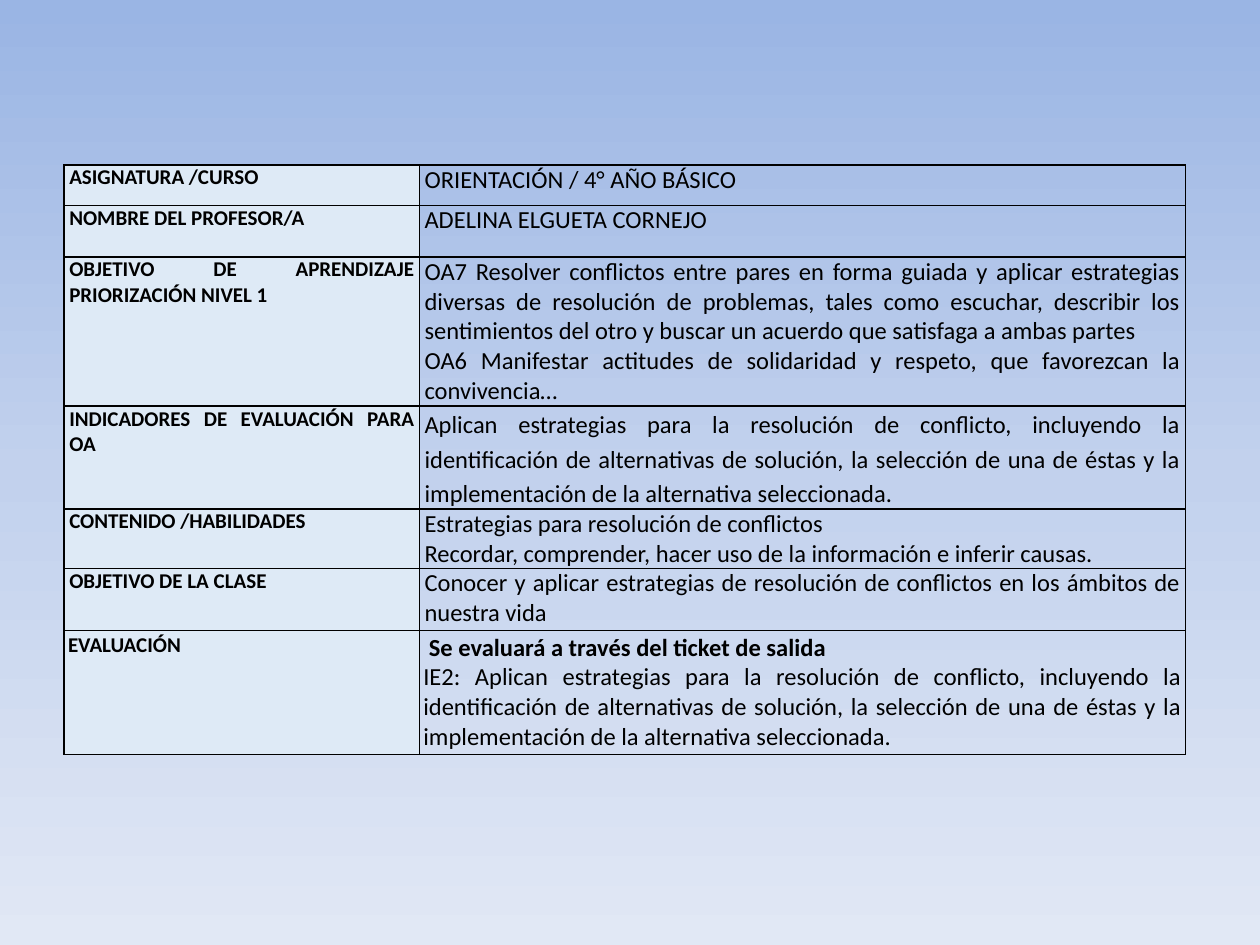
from copy import deepcopy

from lxml import etree
from pptx import Presentation
from pptx.dml.color import RGBColor
from pptx.enum.text import PP_ALIGN
from pptx.oxml.ns import qn
from pptx.util import Inches, Pt

JUSTIFY = PP_ALIGN.JUSTIFY
FONT = "Calibri"
BLACK = "000000"
LABEL_FILL = "DEEAF6"
BACKGROUND_STOPS = [(0, "9AB5E4"), (0.5, "C2D1ED"), (1, "E1E8F5")]
COLUMN_WIDTHS = [2.82, 6.08]
INDICATOR = (
    "Aplican estrategias para la resolución de conflicto, incluyendo la "
    "identificación de alternativas de solución, la selección de una de éstas "
    "y la implementación de la alternativa seleccionada."
)
ROWS = [
    (0.32, "ASIGNATURA /CURSO", ["ORIENTACIÓN / 4° AÑO BÁSICO"]),
    (0.41, "NOMBRE DEL PROFESOR/A", ["ADELINA ELGUETA CORNEJO"]),
    (1.18, "OBJETIVO DE APRENDIZAJE PRIORIZACIÓN NIVEL 1", [
        "OA7 Resolver conflictos entre pares en forma guiada y aplicar "
        "estrategias diversas de resolución de problemas, tales como escuchar, "
        "describir los sentimientos del otro y buscar un acuerdo que satisfaga "
        "a ambas partes",
        "OA6 Manifestar actitudes de solidaridad y respeto, que favorezcan la "
        "convivencia…",
    ]),
    (0.81, "INDICADORES DE EVALUACIÓN PARA OA", [INDICATOR]),
    (0.47, "CONTENIDO /HABILIDADES", [
        "Estrategias para resolución de conflictos",
        "Recordar, comprender, hacer uso de la información e inferir causas.",
    ]),
    (0.49, "OBJETIVO DE LA CLASE", [
        "Conocer y aplicar estrategias de resolución de conflictos en los "
        "ámbitos de nuestra vida",
    ]),
    (0.98, "EVALUACIÓN", [
        " Se evaluará a través del ticket de salida",
        "IE2: " + INDICATOR,
    ]),
]
INDICATOR_ROW = 3
EVALUATION_ROW = 6


def rgb(color):
    return RGBColor.from_string(color)


def set_background(slide):
    fill = slide.background.fill
    fill.gradient()
    fill.gradient_angle = 270
    stop_list = next(slide.element.iter(qn("a:gsLst")))
    stop_list.append(deepcopy(stop_list[-1]))
    for stop, (position, color) in zip(fill.gradient_stops, BACKGROUND_STOPS):
        stop.position = position
        stop.color.rgb = rgb(color)


def set_borders(cell):
    tcPr = cell._tc.get_or_add_tcPr()
    for i, side in enumerate(("a:lnL", "a:lnR", "a:lnT", "a:lnB")):
        ln = etree.Element(qn(side), w=str(Pt(1)))
        solid = etree.SubElement(ln, qn("a:solidFill"))
        etree.SubElement(solid, qn("a:srgbClr"), val=BLACK)
        tcPr.insert(i, ln)


def set_margins(cell, horizontal, vertical):
    cell.margin_left = cell.margin_right = Inches(horizontal)
    cell.margin_top = cell.margin_bottom = Inches(vertical)


def write_cell(cell, lines, size, bold):
    tf = cell.text_frame
    tf.text = "\n".join(lines)
    for p in tf.paragraphs:
        p.alignment = JUSTIFY
        for r in p.runs:
            r.font.name = FONT
            r.font.size = Pt(size)
            r.font.bold = bold
            r.font.color.rgb = rgb(BLACK)


def add_plan_table(slide):
    height = sum(row[0] for row in ROWS)
    frame = slide.shapes.add_table(
        len(ROWS), len(COLUMN_WIDTHS), Inches(0.51), Inches(1.31),
        Inches(sum(COLUMN_WIDTHS)), Inches(height))
    table = frame.table
    table.first_row = False
    table.horz_banding = False
    for column, width in zip(table.columns, COLUMN_WIDTHS):
        column.width = Inches(width)
    for i, (row_height, label, lines) in enumerate(ROWS):
        table.rows[i].height = Inches(row_height)
        label_cell, text_cell = table.cell(i, 0), table.cell(i, 1)
        write_cell(label_cell, [label], 12, True)
        write_cell(text_cell, lines, 14, False)
        label_cell.fill.solid()
        label_cell.fill.fore_color.rgb = rgb(LABEL_FILL)
        text_cell.fill.background()
        margins = (0.03, 0.02) if i == EVALUATION_ROW else (0.04, 0)
        for cell in (label_cell, text_cell):
            set_margins(cell, *margins)
            set_borders(cell)
    indicator = table.cell(INDICATOR_ROW, 1).text_frame.paragraphs[0]
    indicator.line_spacing = 1.15
    evaluation = table.cell(EVALUATION_ROW, 1).text_frame.paragraphs[0]
    evaluation.runs[0].font.bold = True


def main():
    prs = Presentation()
    prs.slide_width = Inches(10)
    prs.slide_height = Inches(7.5)
    slide = prs.slides.add_slide(prs.slide_layouts[6])
    set_background(slide)
    add_plan_table(slide)
    prs.save("out.pptx")


if __name__ == "__main__":
    main()
